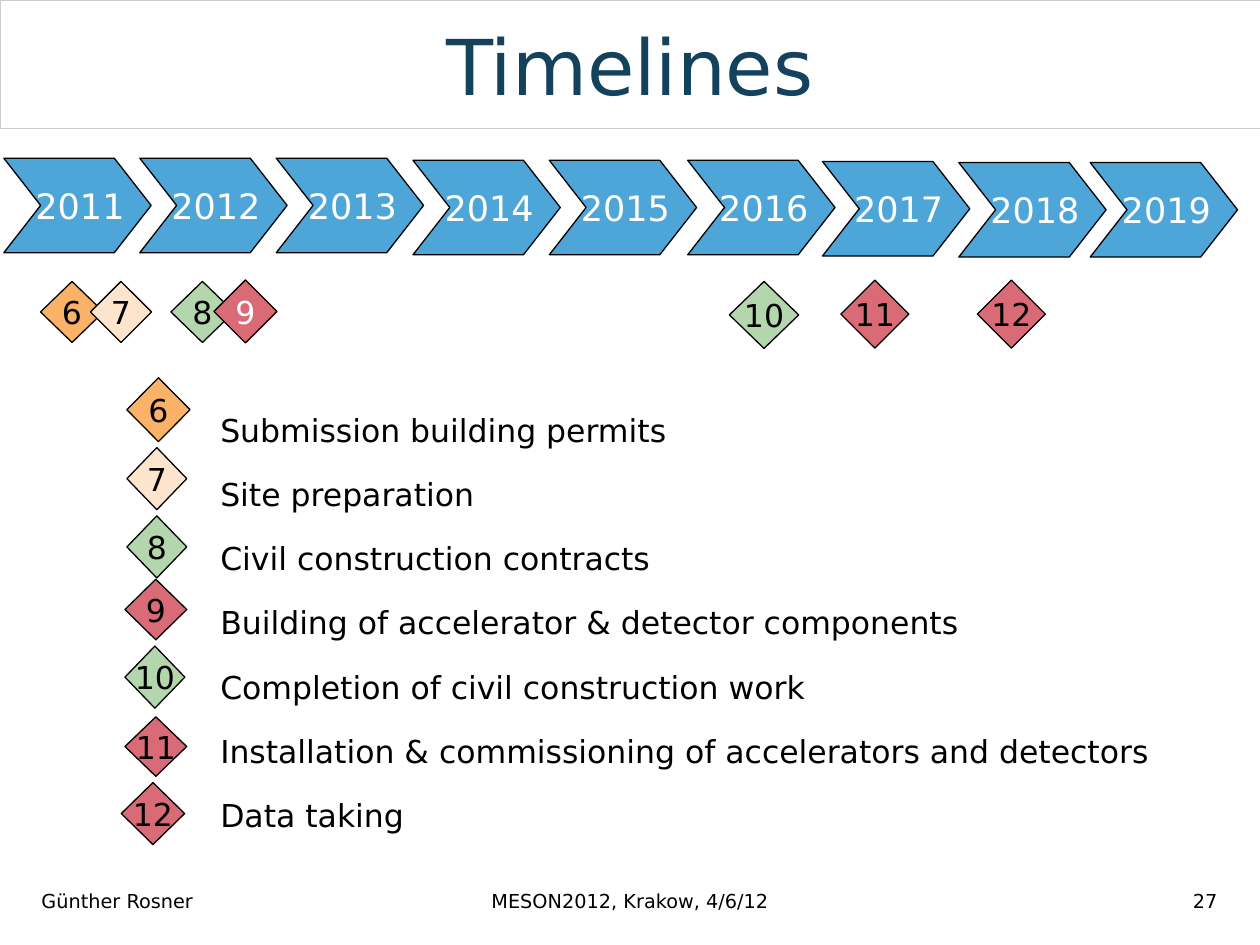
"""Build the Timelines slide: a chevron for each year, numbered milestones and their legend."""
from pptx import Presentation
from pptx.dml.color import RGBColor
from pptx.enum.shapes import MSO_SHAPE
from pptx.enum.text import MSO_ANCHOR, MSO_AUTO_SIZE, PP_ALIGN
from pptx.util import Pt

RECT, CHEVRON, DIAMOND = MSO_SHAPE.RECTANGLE, MSO_SHAPE.CHEVRON, MSO_SHAPE.DIAMOND
LEFT, CENTER, RIGHT = PP_ALIGN.LEFT, PP_ALIGN.CENTER, PP_ALIGN.RIGHT
MIDDLE = MSO_ANCHOR.MIDDLE
GROW = MSO_AUTO_SIZE.SHAPE_TO_FIT_TEXT

FONT = "DejaVu Sans"
BLACK, WHITE, BLUE = "000000", "FFFFFF", "4EA5D8"
ORANGE, CREAM, GREEN, RED = "F9B268", "FDE5CD", "B3D6AC", "D96B77"
FILLS = {6: ORANGE, 7: CREAM, 8: GREEN, 9: RED, 10: GREEN, 11: RED, 12: RED}


def write(para, text, size, color=BLACK, align=CENTER):
    para.text = text
    para.alignment = align
    para.font.name = FONT
    para.font.size = Pt(size)
    para.font.color.rgb = RGBColor.from_string(color)


def draw(shapes, kind, box, text, size, color, fill, line=BLACK, width=0.75):
    shape = shapes.add_shape(kind, *map(Pt, box))
    shape.shadow.inherit = False
    if fill:
        shape.fill.solid()
        shape.fill.fore_color.rgb = RGBColor.from_string(fill)
    else:
        shape.fill.background()
    shape.line.color.rgb = RGBColor.from_string(line)
    shape.line.width = Pt(width)
    frame = shape.text_frame
    frame.word_wrap = False
    frame.vertical_anchor = MIDDLE
    write(frame.paragraphs[0], text, size, color)
    return shape


deck = Presentation()
deck.slide_width, deck.slide_height = Pt(720), Pt(540)
slide = deck.slides.add_slide(deck.slide_layouts[6])
shapes = slide.shapes

draw(shapes, RECT, (0, 0, 720, 73.4), "Timelines", 44, "14425D", None, "CCCCCC", 0.25)

footer = [
    (16.6, 167.8, "Günther Rosner", LEFT),
    (225.4, 269.3, "MESON2012, Krakow, 4/6/12", CENTER),
    (535, 167.8, "27", RIGHT),
]
for left, width, text, align in footer:
    frame = shapes.add_textbox(Pt(left), Pt(500.4), Pt(width), Pt(28.8)).text_frame
    frame.word_wrap = True
    frame.vertical_anchor = MIDDLE
    write(frame.paragraphs[0], text, 11, align=align)

years = [
    (2.2, 90.4), (79.9, 90.4), (157.9, 90.4),
    (236, 91.6), (313.9, 91.6), (393, 91.6),
    (470, 92.3), (547.9, 92.9), (623, 92.9),
]
for year, (left, top) in enumerate(years, 2011):
    arrow = draw(shapes, CHEVRON, (left, top, 84.2, 54), str(year), 20, WHITE, BLUE)
    arrow.adjustments[0] = 0.39
    arrow.text_frame.margin_left = Pt(10)

marks = [
    (23.2, 160.8, 36, 34.9), (51.7, 160.8, 34.9, 34.9),
    (97.7, 160.8, 36, 34.9), (122.3, 160, 36, 36),
    (416.8, 160.8, 39.6, 38.3), (480.5, 160.1, 38.9, 38.9),
    (558.5, 160.1, 38.9, 38.9),
]
for mark, box in enumerate(marks, 6):
    color = WHITE if mark == 9 else BLACK
    draw(shapes, DIAMOND, box, str(mark), 18, color, FILLS[mark])

steps = [
    "Submission building permits",
    "Site preparation",
    "Civil construction contracts",
    "Building of accelerator & detector components",
    "Completion of civil construction work",
    "Installation & commissioning of accelerators and detectors",
    "Data taking",
]
frame = shapes.add_textbox(Pt(118.8), Pt(216), Pt(550.1), Pt(267.1)).text_frame
frame.word_wrap = False
frame.auto_size = GROW
for row, step in enumerate(steps):
    para = frame.add_paragraph() if row else frame.paragraphs[0]
    write(para, step, 18, align=LEFT)
    para.line_spacing = 1.7

keys = [
    (72.5, 215.9, 36.1, 36.5), (72.5, 255.8, 34.2, 35.5),
    (72.5, 294.8, 34.2, 35.5), (71.4, 331, 35.3, 34.6),
    (71.4, 369.2, 34.2, 35.5), (71.4, 409.6, 35.3, 34),
    (69.3, 447.2, 36.2, 35.4),
]
legend = shapes.add_group_shape().shapes
for mark, box in enumerate(keys, 6):
    draw(legend, DIAMOND, box, str(mark), 18, BLACK, FILLS[mark])

deck.save("out.pptx")
